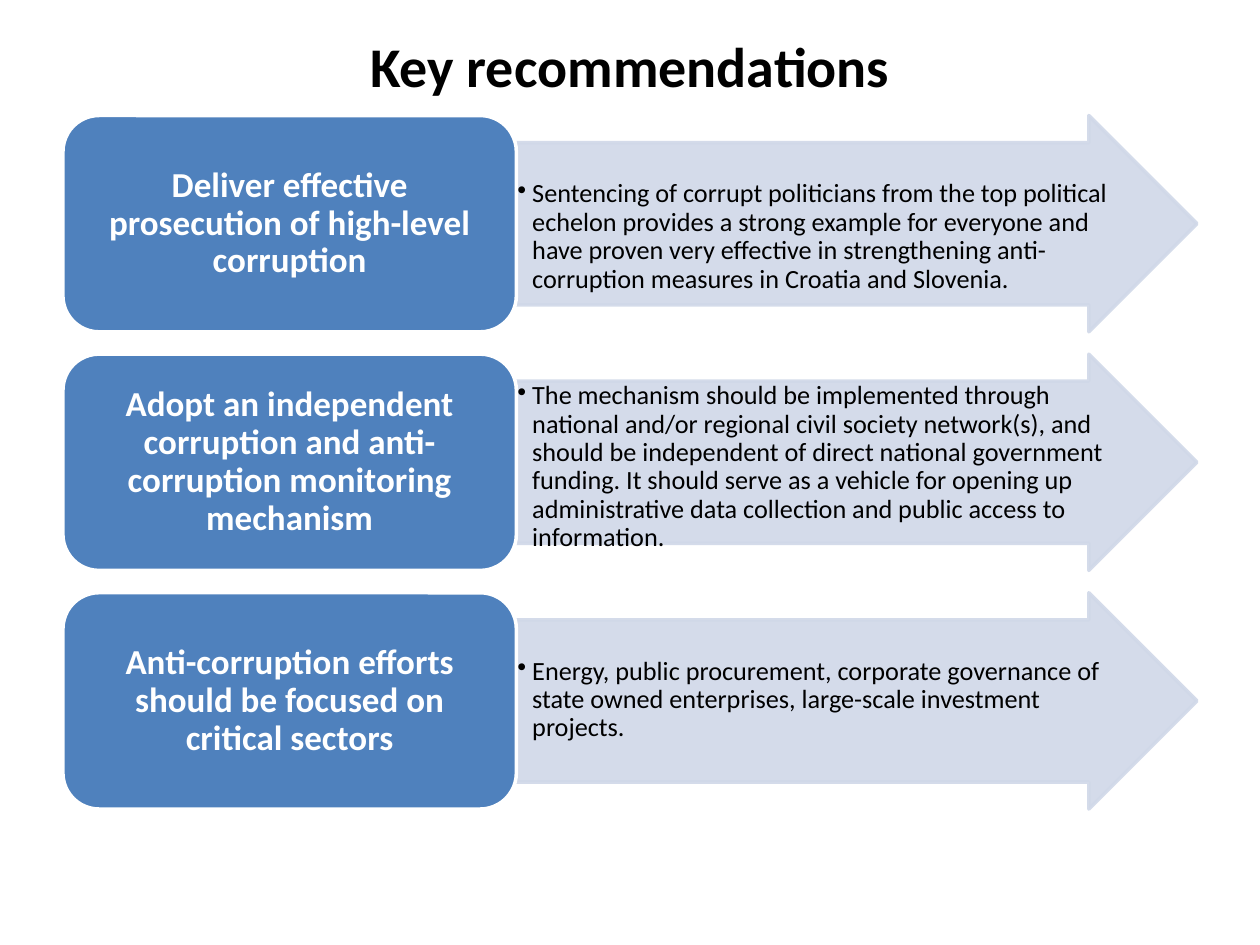
"""Build a slide of key recommendations, each a label box with an arrow of detail."""
from dataclasses import dataclass

from lxml import etree
from pptx import Presentation
from pptx.dml.color import RGBColor
from pptx.enum.shapes import MSO_SHAPE
from pptx.enum.text import MSO_ANCHOR, PP_ALIGN
from pptx.oxml.ns import qn
from pptx.shapes.autoshape import Shape
from pptx.slide import Slide
from pptx.util import Cm, Pt

ARROW, BOX = MSO_SHAPE.RIGHT_ARROW, MSO_SHAPE.ROUNDED_RECTANGLE
TOP, MIDDLE = MSO_ANCHOR.TOP, MSO_ANCHOR.MIDDLE
LEFT, CENTER = PP_ALIGN.LEFT, PP_ALIGN.CENTER

COLORS = {"black": "000000", "white": "FFFFFF", "blue": "4F81BD", "pale": "D0D8E8"}
FONTS = {
    "title": {"name": "Calibri", "size": Pt(32), "bold": True},
    "label": {"name": "Calibri", "size": Pt(20), "bold": True},
    "detail": {"name": "Calibri", "size": Pt(15), "bold": False},
}
FRAMES = {
    "label": {"word_wrap": True, "vertical_anchor": MIDDLE,
              "margin_left": Cm(0.2), "margin_right": Cm(0.2),
              "margin_top": Cm(0.1), "margin_bottom": Cm(0.1)},
    "detail": {"word_wrap": True, "vertical_anchor": TOP,
               "margin_left": Cm(0.02), "margin_right": Cm(0.02),
               "margin_bottom": Cm(0.02)},
}
PARAS = {
    "label": {"alignment": CENTER, "line_spacing": 0.9},
    "detail": {"alignment": LEFT, "line_spacing": 0.9, "level": 1},
}
EDGE, SPLIT, START = 1.27, 10.41, 2.33
WIDE, LONG, TALL, STEP = 9.14, 13.72, 4.36, 4.81


@dataclass
class Advice:
    label: str
    detail: str
    drop: float = 0.76


ITEMS = [
    Advice("Deliver effective prosecution of high-level corruption",
           "Sentencing of corrupt politicians from the top political echelon provides "
           "a strong example for everyone and have proven very effective in "
           "strengthening anti-corruption measures in Croatia and Slovenia."),
    Advice("Adopt an independent corruption and anti-corruption monitoring mechanism",
           "The mechanism should be implemented through national and/or regional civil "
           "society network(s), and should be independent of direct national government "
           "funding. It should serve as a vehicle for opening up administrative data "
           "collection and public access to information.", 0.02),
    Advice("Anti-corruption efforts should be focused on critical sectors",
           "Energy, public procurement, corporate governance of state owned "
           "enterprises, large-scale investment projects."),
]


def apply(target: object, values: dict) -> None:
    for name, value in values.items():
        setattr(target, name, value)


def tint(name: str) -> RGBColor:
    return RGBColor.from_string(COLORS[name])


def write(shape: Shape, text: str, style: str, color: str) -> None:
    frame = shape.text_frame
    apply(frame, FRAMES.get(style, {}))
    para = frame.paragraphs[0]
    para.text = text
    apply(para, PARAS.get(style, {"alignment": CENTER}))
    if style == "detail":
        props = para._p.get_or_add_pPr()
        props.set("marL", str(Cm(0.3)))
        props.set("indent", str(Cm(-0.3)))
        etree.SubElement(props, qn("a:buChar")).set("char", "•")
    font = para.runs[0].font
    apply(font, FONTS[style])
    font.color.rgb = tint(color)


def draw(slide: Slide, kind: MSO_SHAPE, left: float, top: float, width: float,
         fill: str, line: str) -> Shape:
    shape = slide.shapes.add_shape(kind, Cm(left), Cm(top), Cm(width), Cm(TALL))
    shape.shadow.inherit = False
    shape.fill.solid()
    shape.fill.fore_color.rgb = tint(fill)
    shape.line.color.rgb = tint(line)
    shape.line.width = Pt(2)
    return shape


def fade(shape: Shape) -> None:
    for color in shape._element.spPr.iter(qn("a:srgbClr")):
        etree.SubElement(color, qn("a:alpha")).set("val", "90000")


def add_row(slide: Slide, item: Advice, top: float) -> None:
    arrow = draw(slide, ARROW, SPLIT, top, LONG, "pale", "pale")
    arrow.adjustments[0] = 0.75
    arrow.adjustments[1] = 0.5
    fade(arrow)
    write(arrow, item.detail, "detail", "black")
    arrow.text_frame.margin_top = Cm(item.drop)
    box = draw(slide, BOX, EDGE, top, WIDE, "blue", "white")
    write(box, item.label, "label", "white")


def main() -> None:
    deck = Presentation()
    apply(deck, {"slide_width": Cm(25.4), "slide_height": Cm(19.05)})
    slide = deck.slides.add_slide(deck.slide_layouts[5])
    title = slide.shapes.title
    apply(title, {"left": Cm(EDGE), "top": Cm(-0.28),
                  "width": Cm(22.86), "height": Cm(3.18)})
    write(title, "Key recommendations", "title", "black")
    for row, item in enumerate(ITEMS):
        add_row(slide, item, START + row * STEP)
    deck.save("out.pptx")


if __name__ == "__main__":
    main()
